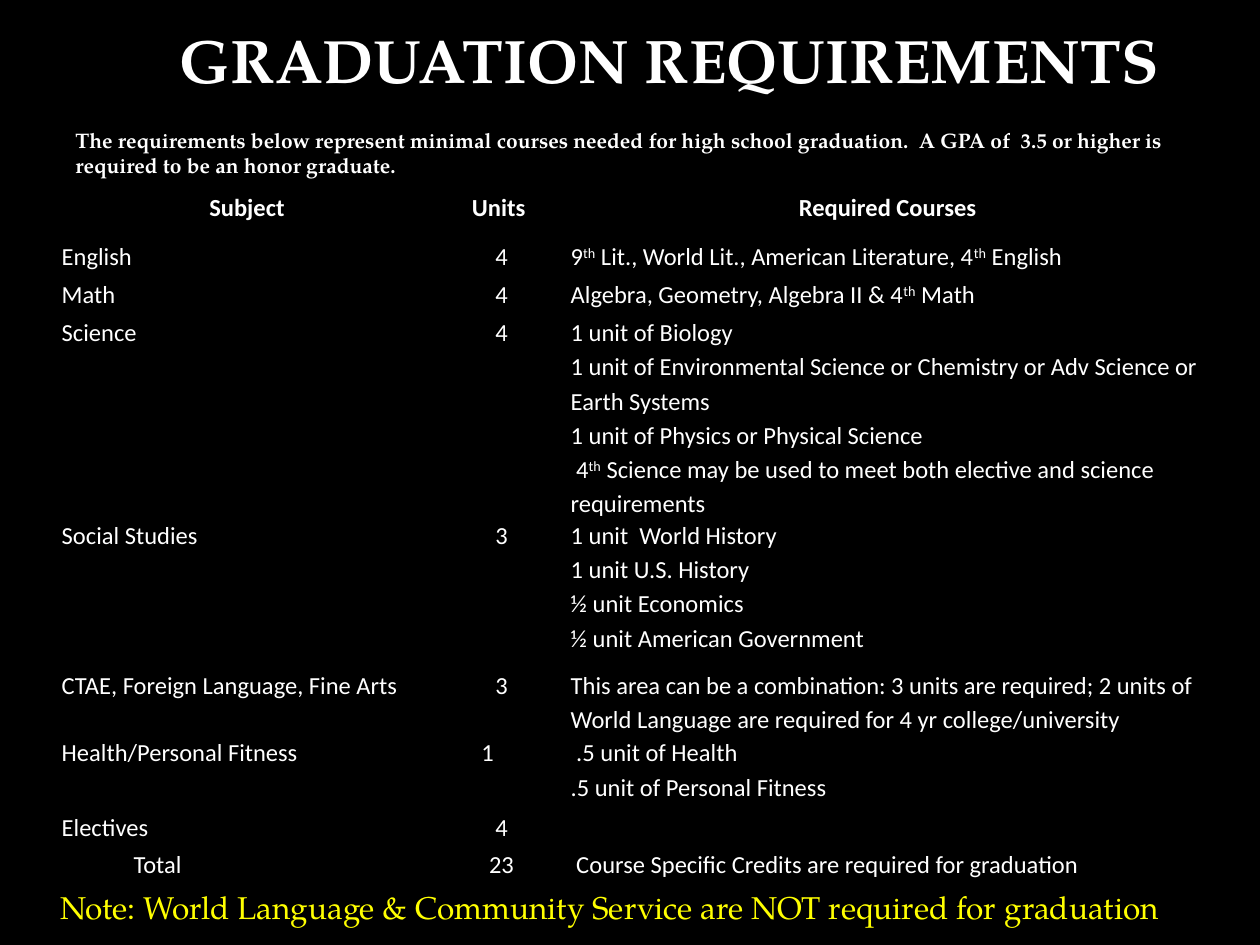
import dataclasses

import lxml.etree
import pptx
import pptx.dml.color
import pptx.enum.text
import pptx.oxml.ns
import pptx.util

Inches = pptx.util.Inches
Pt = pptx.util.Pt
RGB = pptx.dml.color.RGBColor
ALIGN = pptx.enum.text.PP_ALIGN


@dataclasses.dataclass(frozen=True)
class Theme:
    back: RGB = RGB(0, 0, 0)
    text: RGB = RGB(255, 255, 255)
    note: RGB = RGB(255, 255, 0)
    serif: str = "TeX Gyre Pagella"
    sans: str = "Calibri"
    title: float = 35
    intro: float = 12
    body: float = 14
    foot: float = 18


@dataclasses.dataclass(frozen=True)
class Label:
    text: str
    left: float
    top: float
    width: float
    height: float
    size: float
    color: RGB
    bold: bool


@dataclasses.dataclass(frozen=True)
class Row:
    subject: str
    units: str
    courses: tuple[str, ...]
    height: float
    indent: float = 0  # extra left margin of the subject
    shift: float = 0  # extra right margin of the units


THEME = Theme()
PAD = 0.07
COLS = (3.08, 0.96, 5.17)

LABELS = (
    Label("GRADUATION REQUIREMENTS", 1.33, 0.13, 8.33, 1.16,
          THEME.title, THEME.text, True),
    Label("The requirements below represent minimal courses needed for high "
          "school graduation.  A GPA of  3.5 or higher is required to be an "
          "honor graduate.", 0.5, 0.96, 8.92, 0.5,
          THEME.intro, THEME.text, True),
    Label("Note: World Language & Community Service are NOT required for "
          "graduation", 0.38, 7, 9.08, 0.4,
          THEME.foot, THEME.note, False),
)

# A pair of ^ marks encloses superscript text.
ROWS = (
    Row("Subject", "Units ", ("Required Courses",), 0.39),
    Row("English", "4",
        ("9^th^ Lit., World Lit., American Literature, 4^th^ English",), 0.3),
    Row("Math", "4", ("Algebra, Geometry, Algebra II & 4^th^ Math",), 0.3),
    Row("Science", "4", (
        "1 unit of Biology",
        "1 unit of Environmental Science or Chemistry or Adv Science or "
        "Earth Systems",
        "1 unit of Physics or Physical Science",
        " 4^th^ Science may be used to meet both elective and science "
        "requirements"), 1.48),
    Row("Social Studies", "3", (
        "1 unit  World History", "1 unit U.S. History",
        "½ unit Economics", "½ unit American Government"), 1.19),
    Row("CTAE, Foreign Language, Fine Arts", "3", (
        "This area can be a combination: 3 units are required; 2 units of "
        "World Language are required for 4 yr college/university",), 0.41),
    Row("Health/Personal Fitness", "1",
        (" .5 unit of Health", ".5 unit of Personal Fitness"), 0.59,
        shift=0.22),
    Row("Electives", "4", (), 0.3),
    Row("Total", "23",
        (" Course Specific Credits are required for graduation",), 0.3,
        indent=0.57),
)


def style(run, face: str, size: float, color: RGB, bold: bool) -> None:
    font = run.font
    font.name = face
    font.size = Pt(size)
    font.color.rgb = color
    font.bold = bold


def add_label(slide, label: Label) -> None:
    box = slide.shapes.add_textbox(
        Inches(label.left), Inches(label.top),
        Inches(label.width), Inches(label.height))
    frame = box.text_frame
    frame.word_wrap = True
    frame.auto_size = pptx.enum.text.MSO_AUTO_SIZE.SHAPE_TO_FIT_TEXT
    frame.text = label.text
    style(frame.paragraphs[0].runs[0], THEME.serif, label.size,
          label.color, label.bold)


def add_border(cell) -> None:
    props = cell._tc.get_or_add_tcPr()
    qn = pptx.oxml.ns.qn
    for spot, side in enumerate(("a:lnL", "a:lnR", "a:lnT", "a:lnB")):
        line = lxml.etree.Element(qn(side), w=str(Pt(1)))
        fill = lxml.etree.SubElement(line, qn("a:solidFill"))
        lxml.etree.SubElement(fill, qn("a:srgbClr"), val=str(THEME.back))
        props.insert(spot, line)


def fill_cell(cell, lines: tuple[str, ...], center: bool, bold: bool) -> None:
    cell.margin_left = cell.margin_right = Inches(PAD)
    cell.margin_top = cell.margin_bottom = 0
    cell.fill.solid()
    cell.fill.fore_color.rgb = THEME.back
    add_border(cell)
    frame = cell.text_frame
    frame.text = "\n".join(lines)
    for para, line in zip(frame.paragraphs, lines):
        para.line_spacing = 1.15
        para.alignment = ALIGN.CENTER if center else ALIGN.LEFT
        first, *rest = line.split("^")
        para.runs[0].text = first
        for part in rest:
            para.add_run().text = part
        for spot, run in enumerate(para.runs):
            style(run, THEME.sans, THEME.body, THEME.text, bold)
            if spot % 2:
                run._r.get_or_add_rPr().set("baseline", "30000")


def add_courses(slide) -> None:
    table = slide.shapes.add_table(
        len(ROWS), len(COLS), Inches(0.42), Inches(1.5),
        Inches(sum(COLS)), Inches(sum(row.height for row in ROWS))).table
    table.first_row = table.horz_banding = False
    for col, width in zip(table.columns, COLS):
        col.width = Inches(width)
    for spot, row in enumerate(ROWS):
        table.rows[spot].height = Inches(row.height)
        head = spot == 0
        texts = ((row.subject,), (row.units,), row.courses)
        for col, lines in enumerate(texts):
            fill_cell(table.cell(spot, col), lines, head or col == 1, head)
        table.cell(spot, 0).margin_left = Inches(PAD + row.indent)
        table.cell(spot, 1).margin_right = Inches(PAD + row.shift)


def main() -> None:
    deck = pptx.Presentation()
    deck.slide_width = Inches(10)
    deck.slide_height = Inches(7.5)
    slide = deck.slides.add_slide(deck.slide_layouts[6])
    slide.background.fill.solid()
    slide.background.fill.fore_color.rgb = THEME.back
    title, *others = LABELS
    add_label(slide, title)
    add_courses(slide)
    for label in others:
        add_label(slide, label)
    deck.save("out.pptx")


if __name__ == "__main__":
    main()
